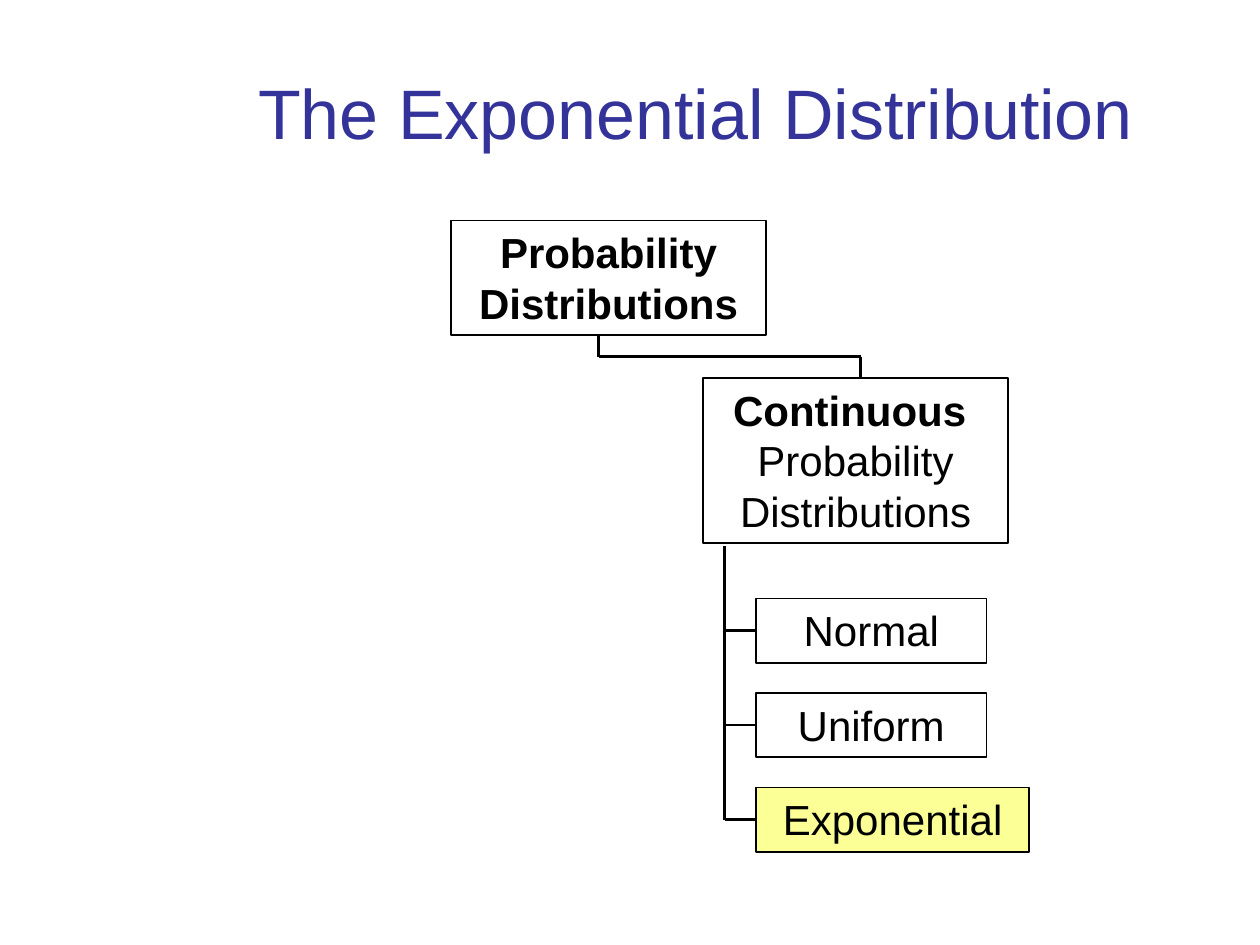
from lxml.etree import SubElement
from pptx import Presentation
from pptx.dml.color import RGBColor
from pptx.enum.shapes import MSO_CONNECTOR, MSO_SHAPE
from pptx.enum.text import MSO_ANCHOR, PP_ALIGN
from pptx.oxml.ns import qn
from pptx.util import Inches, Pt


def write_lines(shape, lines, size, color):
    frame = shape.text_frame
    frame.word_wrap = True
    frame.vertical_anchor = MSO_ANCHOR.TOP
    for index, (text, bold) in enumerate(lines):
        paragraph = frame.paragraphs[0] if index == 0 else frame.add_paragraph()
        paragraph.text = text
        paragraph.alignment = PP_ALIGN.CENTER
        paragraph.font.name = "Arial"
        paragraph.font.size = Pt(size)
        paragraph.font.bold = bold
        paragraph.font.color.rgb = RGBColor.from_string(color)


def add_line(x1, y1, x2, y2):
    line = slide.shapes.add_connector(
        MSO_CONNECTOR.STRAIGHT, Inches(x1), Inches(y1), Inches(x2), Inches(y2))
    line.line.color.rgb = RGBColor.from_string("000000")
    line.line.width = Pt(1.5)
    SubElement(line._element.spPr, qn("a:effectLst"))
    return line


presentation = Presentation()
presentation.slide_width = Inches(10)
presentation.slide_height = Inches(7.5)
slide = presentation.slides.add_slide(presentation.slide_layouts[5])

title = slide.shapes.title
title.left, title.top = Inches(1.67), Inches(0.5)
title.width, title.height = Inches(7.7), Inches(0.76)
write_lines(title, [("The Exponential Distribution", False)], 40, "333399")

trunk_x, leaf_x, leaf_height = 5.75, 6, 0.51
leaf_tops = [4.75 + 0.75 * row for row in range(3)]
boxes = [
    (3.58, 1.75, 2.5, 0.91, None, [("Probability Distributions", True)]),
    (5.58, 3, 2.42, 1.31, None,
     [("Continuous ", True), ("Probability Distributions", False)]),
    (leaf_x, leaf_tops[0], 1.83, leaf_height, None, [("Normal", False)]),
    (leaf_x, leaf_tops[1], 1.83, leaf_height, None, [("Uniform", False)]),
    (leaf_x, leaf_tops[2], 2.17, leaf_height, "FCFF95", [("Exponential", False)]),
]
for left, top, width, height, fill, lines in boxes:
    box = slide.shapes.add_shape(
        MSO_SHAPE.RECTANGLE, Inches(left), Inches(top), Inches(width), Inches(height))
    box.shadow.inherit = False
    if fill:
        box.fill.solid()
        box.fill.fore_color.rgb = RGBColor.from_string(fill)
    else:
        box.fill.background()
    box.line.color.rgb = RGBColor.from_string("000000")
    box.line.width = Pt(1)
    write_lines(box, lines, 24, "000000")
    if left == leaf_x:
        middle = top + height / 2
        add_line(leaf_x, middle, trunk_x, middle).begin_connect(box, 1)

add_line(trunk_x, 4.33, trunk_x, leaf_tops[-1] + leaf_height / 2)
add_line(4.75, 2.67, 4.75, 2.83)
add_line(4.75, 2.83, 6.83, 2.83)
add_line(6.83, 2.83, 6.83, 3)

presentation.save("out.pptx")
